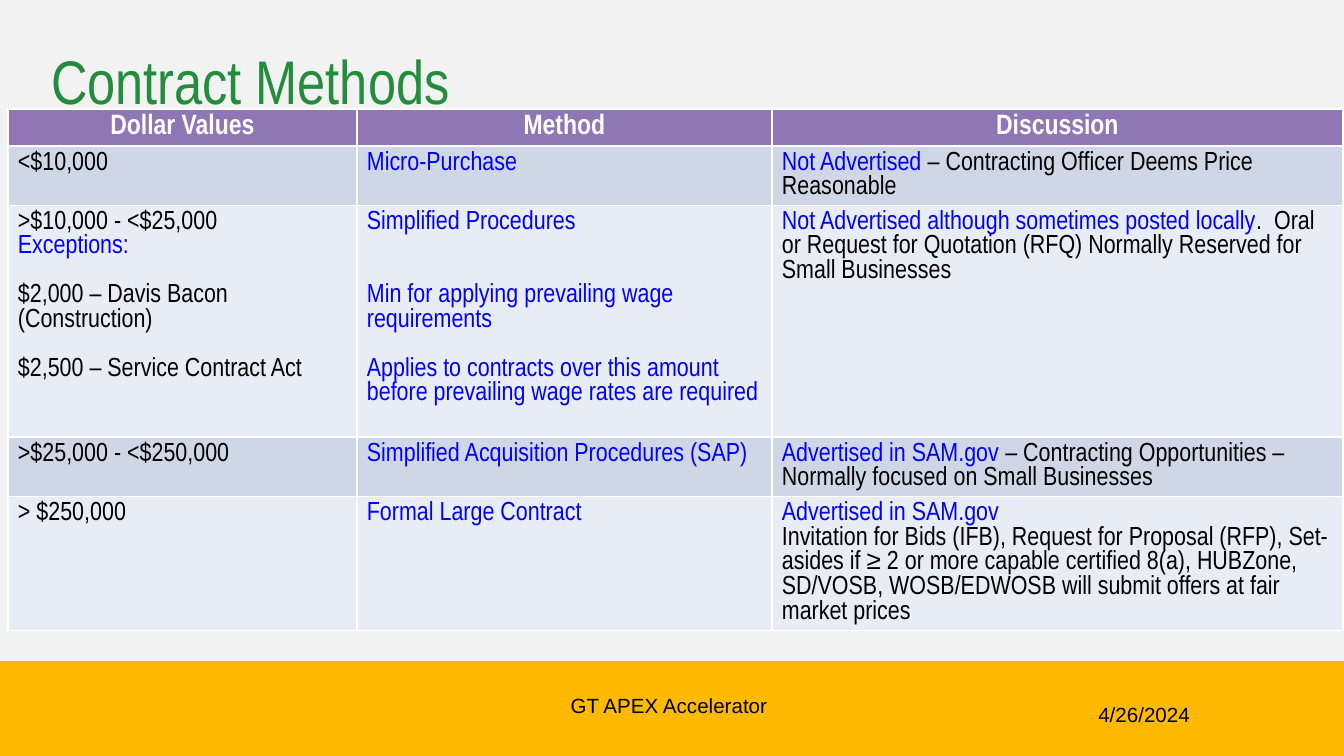
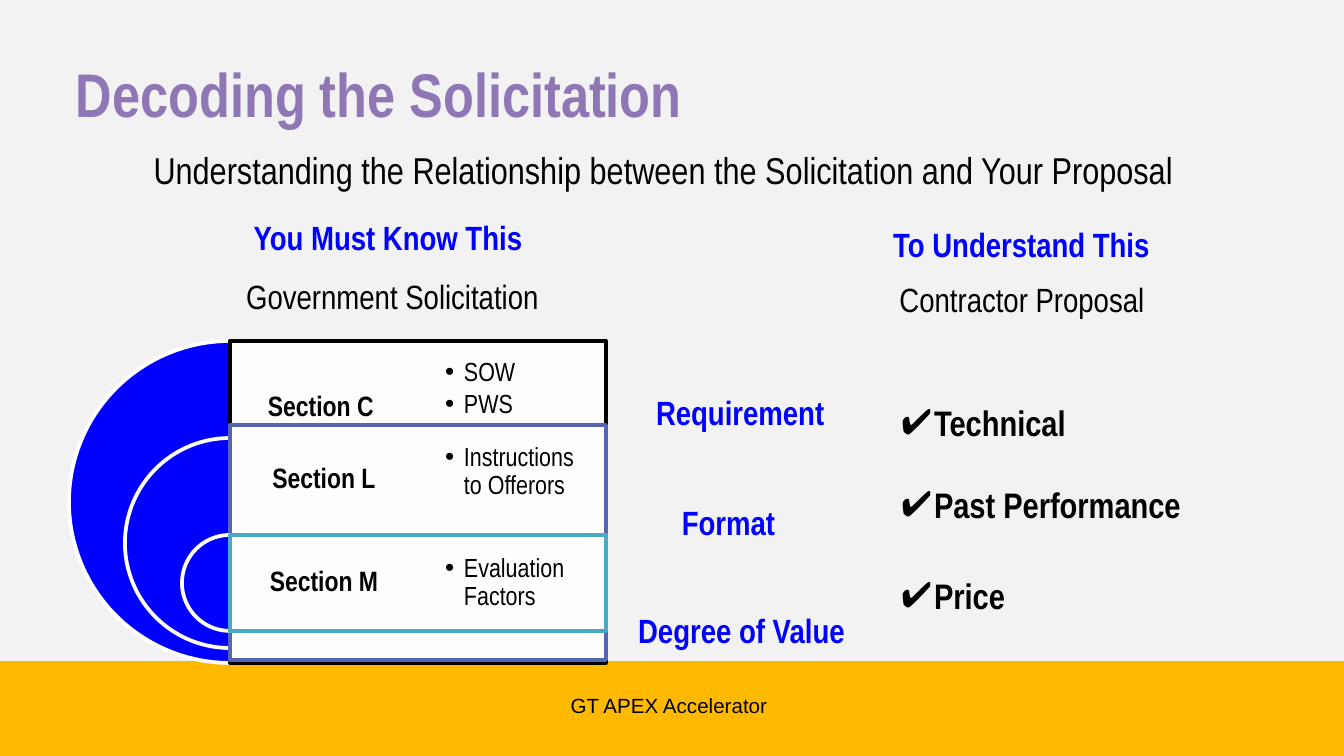
from dataclasses import dataclass
from lxml import etree
from pptx import Presentation
from pptx import util as u
from pptx.dml.color import RGBColor
from pptx.enum import shapes, text
from pptx.oxml.ns import qn

EMU_PER_PX = 914400 / 134.4
WIDTH, HEIGHT, BAND_TOP = 1344, 756, 661
LEFT, CENTER, RIGHT = text.PP_ALIGN.LEFT, text.PP_ALIGN.CENTER, text.PP_ALIGN.RIGHT
TOP, MIDDLE, BOTTOM = text.MSO_ANCHOR.TOP, text.MSO_ANCHOR.MIDDLE, text.MSO_ANCHOR.BOTTOM
BOX_INSETS = (9, 5, 9, 5)


@dataclass(frozen=True)
class Theme:
    font: str = "Arial Narrow"
    footer_font: str = "Arial"
    black: str = "000000"
    white: str = "FFFFFF"
    blue: str = "0000FF"
    green: str = "248C3D"
    purple: str = "8F77B6"
    indigo: str = "5665B3"
    teal: str = "4AA9C5"
    gold: str = "FFBA00"
    canvas: str = "F2F2F2"
    row_dark: str = "CFD7E7"
    row_light: str = "E8ECF4"
    title: int = 33
    subtitle: int = 20
    check: int = 19
    heading: int = 18
    label: int = 15
    body: int = 14
    footer: int = 11


THEME = Theme()


@dataclass
class Line:
    """One paragraph: (text, colour) runs and the points of space above."""
    runs: list
    gap: int = 0


def black(words, gap=0):
    return Line([(words, THEME.black)], gap)


def blue(words, gap=0):
    return Line([(words, THEME.blue)], gap)


def mixed(blue_words, black_words):
    return Line([(blue_words, THEME.blue), (black_words, THEME.black)])


def px(length):
    return u.Emu(round(length * EMU_PER_PX))


class Deck:
    def __init__(self, theme):
        self.theme = theme
        self.presentation = Presentation()
        self.presentation.slide_width = px(WIDTH)
        self.presentation.slide_height = px(HEIGHT)
        self.slide = None

    def add_slide(self, layout):
        self.slide = self.presentation.slides.add_slide(
            self.presentation.slide_layouts[layout])

    def add_master_bands(self):
        """Draw the two bands and move them behind everything on the master."""
        canvas = self.shape(shapes.MSO_SHAPE.RECTANGLE, (0, 0, WIDTH, BAND_TOP),
                            self.theme.canvas)
        band = self.shape(shapes.MSO_SHAPE.RECTANGLE,
                          (0, BAND_TOP, WIDTH, HEIGHT - BAND_TOP), self.theme.gold)
        for shape in (canvas, band):
            self.presentation.slide_master.shapes.element.insert(2, shape.element)

    def place(self, shape, box):
        shape.left, shape.top, shape.width, shape.height = map(px, box)

    def frame(self, shape, anchor=TOP, insets=BOX_INSETS):
        frame = shape.text_frame
        frame.word_wrap = True
        frame.auto_size = text.MSO_AUTO_SIZE.NONE
        frame.vertical_anchor = anchor
        (frame.margin_left, frame.margin_top,
         frame.margin_right, frame.margin_bottom) = map(px, insets)
        return frame

    def style(self, paragraph, size, color, bold=False, align=LEFT, font=None):
        paragraph.alignment = align
        for run in paragraph.runs:
            run.font.name = font or self.theme.font
            run.font.size = u.Pt(size)
            run.font.bold = bold
            run.font.color.rgb = RGBColor.from_string(color)

    def title(self, words, box, color, bold=False, anchor=TOP, insets=BOX_INSETS):
        shape = self.slide.shapes.title
        self.place(shape, box)
        frame = self.frame(shape, anchor, insets)
        frame.text = words
        self.style(frame.paragraphs[0], self.theme.title, color, bold)

    def text(self, words, box, size, color=None, bold=False, align=CENTER,
             anchor=TOP, font=None, spacing=1.0):
        shape = self.slide.shapes.add_textbox(*map(px, box))
        frame = self.frame(shape, anchor)
        frame.text = words
        paragraph = frame.paragraphs[0]
        paragraph.line_spacing = spacing
        self.style(paragraph, size, color or self.theme.black, bold, align, font)

    def bullets(self, shape, items, symbol, indent, size, gaps, spacing,
                bold=False, anchor=TOP, insets=BOX_INSETS):
        frame = self.frame(shape, anchor, insets)
        frame.text = "\n".join(items)
        for paragraph, gap in zip(frame.paragraphs, gaps):
            properties = paragraph._p.get_or_add_pPr()
            properties.set("marL", str(px(indent)))
            properties.set("indent", str(-px(indent)))
            color = etree.SubElement(properties, qn("a:buClr"))
            etree.SubElement(color, qn("a:srgbClr"), val=self.theme.black)
            etree.SubElement(properties, qn("a:buFont"), typeface="Arial")
            etree.SubElement(properties, qn("a:buChar"), char=symbol)
            paragraph.space_before = u.Pt(gap)
            paragraph.line_spacing = spacing
            self.style(paragraph, size, self.theme.black, bold)

    def bullet_box(self, items, box):
        shape = self.slide.shapes.add_textbox(*map(px, box))
        self.bullets(shape, items, "•", 19, self.theme.body, (0, 2), 0.9,
                     anchor=MIDDLE, insets=(27, 27, 27, 27))

    def checklist(self, items, box, gaps):
        shape = self.slide.placeholders[1]
        self.place(shape, box)
        self.bullets(shape, items, "✔", 33, self.theme.check, gaps, 1.0, bold=True)

    def shape(self, kind, box, fill, line=None, opacity=None):
        shape = self.slide.shapes.add_shape(kind, *map(px, box))
        shape.shadow.inherit = False
        shape.fill.solid()
        shape.fill.fore_color.rgb = RGBColor.from_string(fill)
        if opacity:
            color = shape.element.spPr.find(qn("a:solidFill"))[0]
            etree.SubElement(color, qn("a:alpha"), val=str(opacity * 1000))
        if line:
            shape.line.color.rgb = RGBColor.from_string(line)
            shape.line.width = u.Pt(2)
        else:
            shape.line.fill.background()
        return shape

    def half_disc(self, center_x, top, diameter):
        box = (center_x - diameter // 2, top, diameter, diameter)
        pie = self.shape(shapes.MSO_SHAPE.PIE, box, self.theme.blue, self.theme.white)
        pie.adjustments[0], pie.adjustments[1] = 54, 162

    def cell(self, cell, lines, fill, size, bold=False, align=LEFT):
        cell.fill.solid()
        cell.fill.fore_color.rgb = RGBColor.from_string(fill)
        cell.margin_left = cell.margin_right = px(10)
        cell.margin_top = cell.margin_bottom = px(5)
        for index, line in enumerate(lines):
            frame = cell.text_frame
            paragraph = frame.add_paragraph() if index else frame.paragraphs[0]
            paragraph.space_before = u.Pt(line.gap)
            for words, color in line.runs:
                run = paragraph.add_run()
                run.text = words
                self.style(paragraph, size, color, bold, align)
                run.font.color.rgb = RGBColor.from_string(color)
            for run, (_, color) in zip(paragraph.runs, line.runs):
                run.font.color.rgb = RGBColor.from_string(color)

    def table(self, left, top, widths, heights, header, rows):
        frame = self.slide.shapes.add_table(
            len(heights), len(widths), *map(px, (left, top, sum(widths), sum(heights))))
        table = frame.table
        for column, width in zip(table.columns, widths):
            column.width = px(width)
        for row, height in zip(table.rows, heights):
            row.height = px(height)
        for index, words in enumerate(header):
            self.cell(table.cell(0, index), [Line([(words, self.theme.white)])],
                      self.theme.purple, self.theme.label, True, CENTER)
        for number, row in enumerate(rows, 1):
            fill = self.theme.row_dark if number % 2 else self.theme.row_light
            for index, lines in enumerate(row):
                self.cell(table.cell(number, index), lines, fill, self.theme.body)

    def footer(self, date=None):
        style = dict(size=self.theme.footer, font=self.theme.footer_font)
        self.text("GT APEX Accelerator", (436, 683, 466, 40), anchor=BOTTOM, **style)
        if date:
            self.text(date, (1000, 706, 199, 16), align=RIGHT, anchor=MIDDLE, **style)


def contract_methods(deck):
    deck.title("Contract Methods", (51, 23, 907, 94), THEME.green,
               anchor=BOTTOM, insets=(0, 0, 9, 0))
    deck.footer("4/26/2024")
    rows = [
        ([black("<$10,000")],
         [blue("Micro-Purchase")],
         [mixed("Not Advertised ", "– Contracting Officer Deems Price Reasonable")]),
        ([black(">$10,000 - <$25,000"), blue("Exceptions:"),
          black("$2,000 – Davis Bacon (Construction)", 13),
          black("$2,500 – Service Contract Act", 13)],
         [blue("Simplified Procedures"),
          blue("Min for applying prevailing wage requirements", 26),
          blue("Applies to contracts over this amount before prevailing wage "
               "rates are required", 13)],
         [mixed("Not Advertised although sometimes posted locally",
                ".  Oral or Request for Quotation (RFQ) Normally Reserved for "
                "Small Businesses")]),
        ([black(">$25,000 - <$250,000")],
         [blue("Simplified Acquisition Procedures (SAP)")],
         [mixed("Advertised in SAM.gov ",
                "– Contracting Opportunities – Normally focused on Small Businesses")]),
        ([black("> $250,000")],
         [blue("Formal Large Contract")],
         [blue("Advertised in SAM.gov"),
          black("Invitation for Bids (IFB), Request for Proposal (RFP), Set-asides "
                "if ≥ 2 or more capable certified 8(a), HUBZone, SD/VOSB, "
                "WOSB/EDWOSB will submit offers at fair market prices")]),
    ]
    deck.table(8, 109, (349, 415, 571), (37, 59, 232, 59, 134),
               ("Dollar Values", "Method", "Discussion"), rows)


def decoding_the_solicitation(deck):
    deck.title("Decoding the Solicitation", (67, 51, 716, 85), THEME.purple, bold=True)
    deck.text("Understanding the Relationship between the Solicitation and Your Proposal",
              (42, 142, 1243, 55), THEME.subtitle)

    # Column headings and the terms between the columns
    for words, box in (("Government Solicitation", (226, 271, 333, 51)),
                       ("Contractor Proposal", (664, 274, 716, 51))):
        deck.text(words, box, THEME.heading)
    for words, box, align in (
            ("You Must Know This", (218, 212, 340, 51), CENTER),
            ("To Understand This", (853, 219, 337, 51), CENTER),
            ("Requirement", (647, 387, 246, 51), LEFT),
            ("Format", (647, 497, 163, 51), CENTER),
            ("Degree of Value", (616, 605, 251, 51), CENTER)):
        deck.text(words, box, THEME.heading, THEME.blue, True, align)

    # Nested half discs, each with its panel
    axis, panel_width = 230, 376
    for disc_top, diameter, top, height, line in (
            (341, 322, 341, 322, THEME.black),
            (438, 210, 425, 235, THEME.indigo),
            (535, 96, 535, 96, THEME.teal)):
        deck.half_disc(axis, disc_top, diameter)
        deck.shape(shapes.MSO_SHAPE.RECTANGLE, (axis, top, panel_width, height),
                   THEME.white, line, opacity=90)

    # Section names and their contents
    half = panel_width // 2
    deck.text("Section C", (259, 384, 151, 44), THEME.label, bold=True, align=LEFT)
    for words, top, height in (("Section L", 425, 109), ("Section M", 535, 96)):
        deck.text(words, (axis, top, half, height), THEME.label, bold=True,
                  anchor=MIDDLE, spacing=0.9)
    for items, top, height in ((("SOW", "PWS"), 341, 97),
                               (("Instructions to Offerors",), 415, 114),
                               (("Evaluation Factors",), 524, 118)):
        deck.bullet_box(items, (axis + half, top, half, height))

    deck.checklist(("Technical", "Past Performance", "Price"),
                   (892, 396, 300, 237), (0, 21, 26))
    deck.footer()


def main():
    deck = Deck(THEME)
    deck.add_slide(5)
    deck.add_master_bands()
    contract_methods(deck)
    deck.add_slide(1)
    decoding_the_solicitation(deck)
    deck.presentation.save("out.pptx")


if __name__ == "__main__":
    main()
